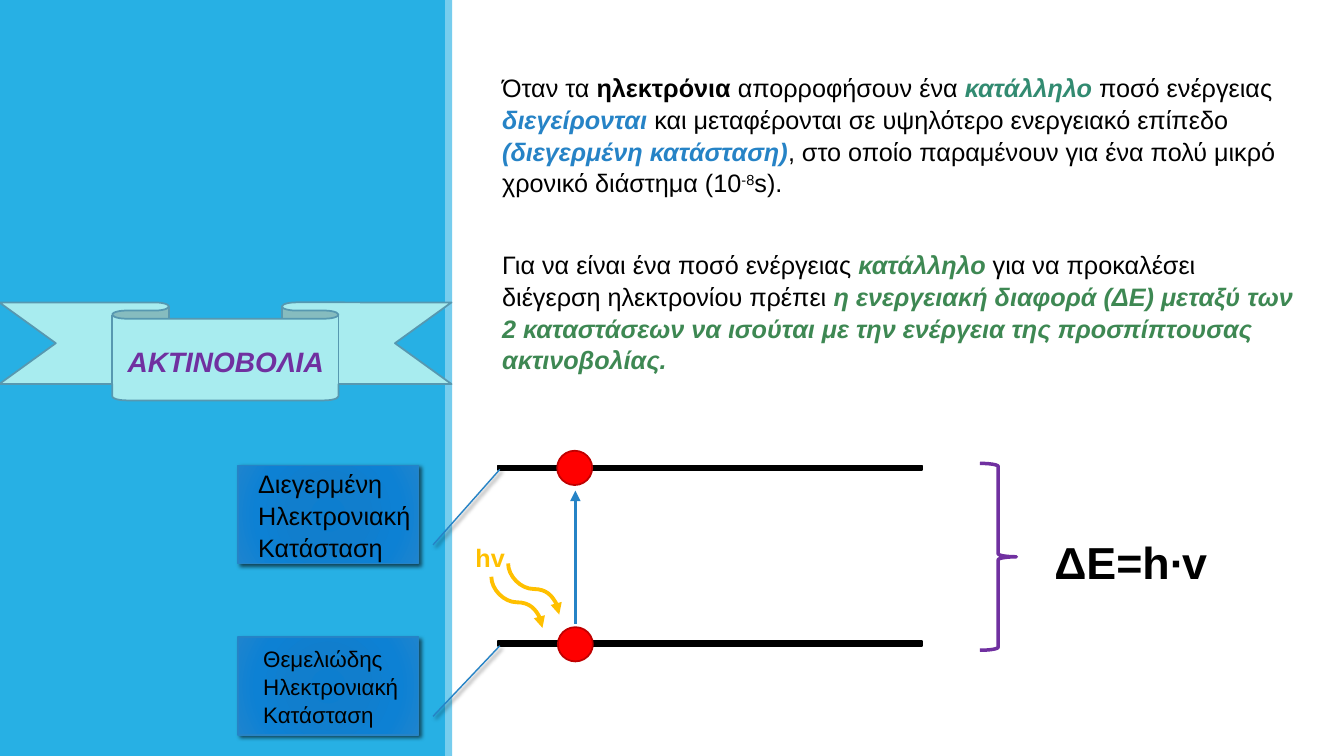
"""Builds a slide on electron excitation by radiation."""
from dataclasses import dataclass

from lxml import etree
from pptx import Presentation
from pptx.dml.color import RGBColor
from pptx.enum.shapes import MSO_CONNECTOR, MSO_SHAPE
from pptx.enum.text import MSO_ANCHOR, MSO_AUTO_SIZE, PP_ALIGN
from pptx.oxml import parse_xml
from pptx.oxml.ns import qn
from pptx.util import Pt

RECTANGLE, OVAL = MSO_SHAPE.RECTANGLE, MSO_SHAPE.OVAL
RIBBON, BRACE = MSO_SHAPE.DOWN_RIBBON, MSO_SHAPE.RIGHT_BRACE
CALLOUT = MSO_SHAPE.LINE_CALLOUT_1
STRAIGHT, CURVE = MSO_CONNECTOR.STRAIGHT, MSO_CONNECTOR.CURVE
TOP, MIDDLE = MSO_ANCHOR.TOP, MSO_ANCHOR.MIDDLE
LEFT, CENTER = PP_ALIGN.LEFT, PP_ALIGN.CENTER
FIXED = MSO_AUTO_SIZE.NONE
DRAWING = "http://schemas.openxmlformats.org/drawingml/2006/main"


@dataclass(frozen=True)
class Theme:
    font: str = "Arial"
    small: int = 16
    normal: int = 18
    heading: int = 20
    formula: int = 32
    spacing: float = 1.05
    white: str = "FFFFFF"
    black: str = "000000"
    panel: str = "27B0E4"
    strip: str = "76CDEE"
    ribbon: str = "A8ECEF"
    ribbon_edge: str = "5798B0"
    purple: str = "7030A0"
    teal: str = "328B71"
    blue: str = "2683C6"
    green: str = "3E8853"
    red: str = "FF0000"
    dark_red: str = "C00000"
    amber: str = "FFC000"
    gradient: tuple = ((0, "0D7ECF"), (34, "117ECD"), (70, "0D81D4"), (100, "1E84CE"))


class SlideBuilder:
    def __init__(self, deck, theme):
        self.theme = theme
        self.page = deck.slides.add_slide(deck.slide_layouts[3])
        self.page.background.fill.solid()
        self.page.background.fill.fore_color.rgb = RGBColor.from_string(theme.white)

    def shape(self, kind, area, fill=None, line=None, width=1.25):
        box = self.page.shapes.add_shape(kind, *map(Pt, area))
        box.shadow.inherit = False
        if fill:
            box.fill.solid()
            box.fill.fore_color.rgb = RGBColor.from_string(fill)
        else:
            box.fill.background()
        if line:
            box.line.color.rgb = RGBColor.from_string(line)
            box.line.width = Pt(width)
        else:
            box.line.fill.background()
        return box

    def set_text(self, box, paragraphs, size, color, bold=None, italic=None,
                 wrap=False, anchor=TOP, align=LEFT):
        frame = box.text_frame
        frame.auto_size = FIXED
        frame.word_wrap = wrap
        frame.vertical_anchor = anchor
        for index, spans in enumerate(paragraphs):
            para = frame.paragraphs[0] if index == 0 else frame.add_paragraph()
            properties = para._p.get_or_add_pPr()
            properties.set("marL", "0")
            properties.set("indent", "0")
            etree.SubElement(properties, qn("a:buNone"))
            para.alignment = align
            para.line_spacing = self.theme.spacing
            para.space_before = Pt(0)
            font = para.font
            font.name, font.size = self.theme.font, Pt(size)
            font.bold, font.italic = bold, italic
            font.color.rgb = RGBColor.from_string(color)
            for text, style in spans:
                self.span(para, text, style)

    def span(self, para, text, style):
        span = para.add_run()
        span.text = text
        if style == "superscript":
            span._r.get_or_add_rPr().set("baseline", "30000")
        elif style:
            span.font.bold = True
            if style != "bold":
                span.font.italic = True
                span.font.color.rgb = RGBColor.from_string(style)

    def placeholder(self, index, area, paragraphs, size, color, **style):
        box = self.page.placeholders[index]
        box.left, box.top, box.width, box.height = map(Pt, area)
        self.page.shapes._spTree.append(box._element)
        self.set_text(box, paragraphs, size, color, **style)

    def label(self, area, text, size, color):
        box = self.page.shapes.add_textbox(*map(Pt, area))
        self.set_text(box, [[(text, None)]], size, color, bold=True)

    def callout(self, top, lines, size, inset, tip):
        box = self.shape(CALLOUT, (170, top, 129, 70), self.theme.blue, self.theme.blue, 1)
        for index, value in enumerate((0.81, 1.08, tip, 1.45)):
            box.adjustments[index] = value
        stops = "".join(f'<a:gs pos="{place * 1000}"><a:srgbClr val="{color}"/></a:gs>'
                        for place, color in self.theme.gradient)
        properties = box._element.spPr
        properties.replace(properties.find(qn("a:solidFill")), parse_xml(
            f'<a:gradFill xmlns:a="{DRAWING}"><a:gsLst>{stops}</a:gsLst><a:path path="circle">'
            '<a:fillToRect l="100000" t="100000" r="100000" b="100000"/></a:path></a:gradFill>'))
        properties.replace(properties.find(qn("a:effectLst")), parse_xml(
            f'<a:effectLst xmlns:a="{DRAWING}"><a:outerShdw blurRad="{Pt(3)}" dist="{Pt(2)}" '
            f'dir="2700000"><a:srgbClr val="{self.theme.black}"><a:alpha val="60000"/>'
            '</a:srgbClr></a:outerShdw></a:effectLst>'))
        box.text_frame.margin_left = Pt(inset)
        box.text_frame.margin_right = Pt(0)
        self.set_text(box, [[(line, None)] for line in lines], size, self.theme.black,
                      anchor=MIDDLE)

    def arrow(self, kind, points, color, width):
        arrow = self.page.shapes.add_connector(kind, *map(Pt, points))
        arrow.line.color.rgb = RGBColor.from_string(color)
        arrow.line.width = Pt(width)
        properties = arrow._element.spPr
        etree.SubElement(properties.get_or_add_ln(), qn("a:tailEnd"), type="triangle")
        etree.SubElement(properties, qn("a:effectLst"))
        return arrow

    def photon(self, left, top, side):
        wave = self.arrow(CURVE, (left + side, top, left, top + side), self.theme.amber, 2.75)
        wave._element.spPr.find(qn("a:xfrm")).set("rot", "16200000")


def main():
    theme = Theme()
    deck = Presentation()
    deck.slide_width, deck.slide_height = Pt(960), Pt(540)
    slide = SlideBuilder(deck, theme)

    slide.shape(RECTANGLE, (0, 0, 319, 540), theme.panel)
    slide.shape(RECTANGLE, (318, 0, 5, 540), theme.strip)
    slide.shape(RIBBON, (-0.5, 216, 323, 70), theme.ribbon, theme.ribbon_edge)
    slide.placeholder(0, (83.5, 242, 155.5, 31.5), [[("ΑΚΤΙΝΟΒΟΛΙΑ", None)]],
                      theme.heading, theme.purple, bold=True, italic=True,
                      anchor=MIDDLE, align=CENTER)
    excitation = [
        ("Όταν τα ", None), ("ηλεκτρόνια", "bold"), (" απορροφήσουν ένα ", None),
        ("κατάλληλο", theme.teal), (" ποσό ενέργειας ", None),
        ("διεγείρονται", theme.blue),
        (" και μεταφέρονται σε υψηλότερο ενεργειακό επίπεδο ", None),
        ("(διεγερμένη κατάσταση)", theme.blue),
        (", στο οποίο παραμένουν για ένα πολύ μικρό χρονικό διάστημα (10", None),
        ("-8", "superscript"), ("s).", None)]
    condition = [
        ("Για να είναι ένα ποσό ενέργειας ", None), ("κατάλληλο", theme.green),
        (" για να προκαλέσει διέγερση ηλεκτρονίου πρέπει ", None),
        ("η ενεργειακή διαφορά (ΔΕ) μεταξύ των 2 καταστάσεων να ισούται με την ενέργεια "
         "της προσπίπτουσας ακτινοβολίας.", theme.green)]
    for index, top, width, spans in ((1, 47, 605.5, excitation), (2, 173.5, 582.5, condition)):
        slide.placeholder(index, (351.5, top, width, 94.5), [spans],
                          theme.normal, theme.black, wrap=True)

    for top in (332.5, 458):
        slide.shape(RECTANGLE, (355.5, top, 303, 3.5), theme.black, theme.black)
    state = ["Ηλεκτρονιακή", "Κατάσταση"]
    slide.callout(455, ["Θεμελιώδης"] + state, theme.small, 18, 0.09)
    slide.callout(332.5, ["Διεγερμένη"] + state, theme.normal, 14.4, 0.04)
    for left, top in ((398.5, 448), (398, 322)):
        slide.shape(OVAL, (left, top, 25, 24.5), theme.red, theme.dark_red)
    slide.arrow(STRAIGHT, (411, 445.5, 411, 350.5), theme.blue, 2.5)
    for left, top in ((363, 402.5), (351, 412)):
        slide.photon(left, top, 36.5)
    slide.label((332.5, 382.5, 37, 29), "hv", theme.normal, theme.amber)
    slide.label((746, 376.5, 124, 46), "ΔE=h∙v", theme.formula, theme.black)
    slide.shape(BRACE, (700, 331, 26, 133.5), line=theme.purple, width=2.5)
    deck.save("out.pptx")


if __name__ == "__main__":
    main()
